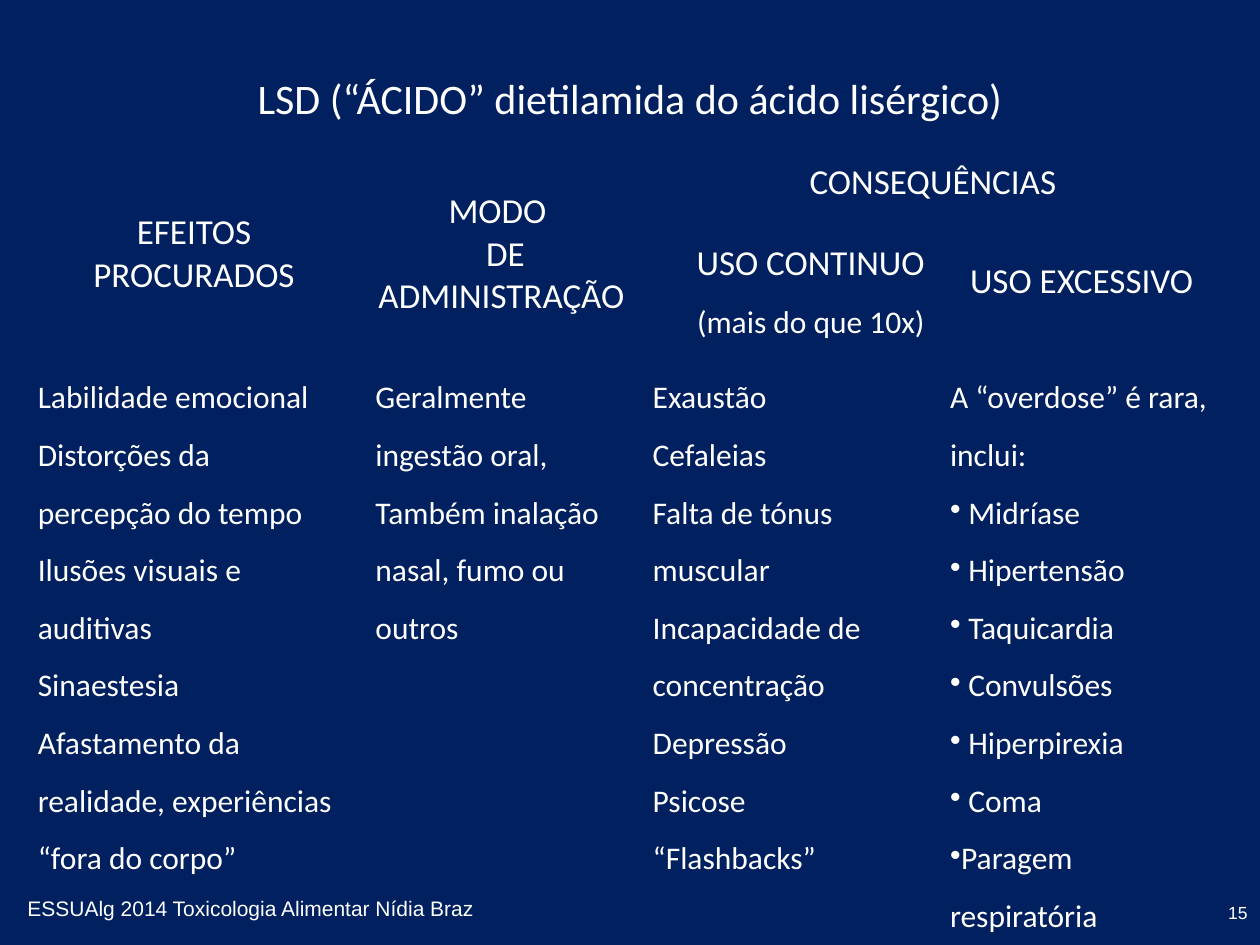
from pptx import Presentation
from pptx.util import Inches, Pt
from pptx.dml.color import RGBColor
from pptx.enum.text import PP_ALIGN as Al, MSO_ANCHOR as Anc
from pptx.oxml.ns import qn
from lxml import etree

NAVY = RGBColor(0x00, 0x20, 0x60)
WHITE = RGBColor(0xFF, 0xFF, 0xFF)
PLAIN = "{2D5ABB26-0587-4C30-8999-92F81FD0307C}"  # table style without borders

prs = Presentation()
prs.slide_width, prs.slide_height = Inches(10), Inches(7.5)
slide = prs.slides.add_slide(prs.slide_layouts[6])
slide.background.fill.solid()
slide.background.fill.fore_color.rgb = NAVY


def write(frame, lines, size, align=Al.LEFT, font="Calibri", space=None):
    frame.word_wrap = True
    for i, line in enumerate(lines):
        para = frame.add_paragraph() if i else frame.paragraphs[0]
        para.alignment, para.line_spacing = align, space
        # A leading bullet mark becomes a real bullet
        para.text = line.removeprefix("•")
        if line.startswith("•"):
            props = para._p.get_or_add_pPr()
            etree.SubElement(props, qn("a:buChar")).set("char", "•")
        for run in para.runs:
            run.font.size, run.font.name = Pt(size), font
            run.font.color.rgb = WHITE


def label(box, text, size, align, font, anchor=Anc.TOP):
    frame = slide.shapes.add_textbox(*map(Inches, box)).text_frame
    write(frame, [text], size, align, font)
    frame.vertical_anchor = anchor


# Title
label((0.5, 0.3, 9, 0.95), "LSD (“ÁCIDO” dietilamida do ácido lisérgico)",
      24, Al.CENTER, "Calibri", Anc.MIDDLE)

# Table grid
cols, rows = (2.68, 2.2, 2.36, 2.29), (0.43, 1.14, 4.51)
frame = slide.shapes.add_table(len(rows), len(cols), Inches(0.2), Inches(1.23),
                               Inches(sum(cols)), Inches(sum(rows)))
table = frame.table
table.first_row = table.horz_banding = False
table._tbl.tblPr.find(qn("a:tableStyleId")).text = PLAIN
for col, width in zip(table.columns, cols):
    col.width = Inches(width)
for row, height in zip(table.rows, rows):
    row.height = Inches(height)
for cell in table.iter_cells():
    cell.fill.solid()
    cell.fill.fore_color.rgb = NAVY
table.cell(0, 0).merge(table.cell(1, 0))
table.cell(0, 1).merge(table.cell(1, 1))
table.cell(0, 2).merge(table.cell(0, 3))

# Headings
heads = [
    (0, 0, ["EFEITOS PROCURADOS"], Al.CENTER, None),
    (0, 1, ["MODO ", " DE ADMINISTRAÇÃO"], Al.CENTER, None),
    (0, 2, ["CONSEQUÊNCIAS"], Al.CENTER, None),
    (1, 2, ["USO CONTINUO "], Al.RIGHT, 1.5),
    (1, 3, ["USO EXCESSIVO"], Al.CENTER, None),
]
for r, c, lines, align, space in heads:
    cell = table.cell(r, c)
    cell.vertical_anchor = Anc.MIDDLE
    write(cell.text_frame, lines, 20, align, space=space)
note = table.cell(1, 2).text_frame.paragraphs[0].add_run()
note.text = "(mais do que 10x)"
note.font.size, note.font.name = Pt(18), "Calibri"
note.font.color.rgb = WHITE

# Body columns
body = [
    ["Labilidade emocional", "Distorções da percepção do tempo",
     "Ilusões visuais e auditivas", "Sinaestesia",
     "Afastamento da realidade, experiências “fora do corpo”"],
    ["Geralmente ingestão oral, ", "Também inalação nasal, fumo ou outros"],
    ["Exaustão", "Cefaleias", "Falta de tónus muscular",
     "Incapacidade de concentração", "Depressão", "Psicose", "“Flashbacks”"],
    ["A “overdose” é rara, inclui:", "• Midríase", "• Hipertensão",
     "• Taquicardia", "• Convulsões", "• Hiperpirexia", "• Coma",
     "•Paragem respiratória"],
]
for c, lines in enumerate(body):
    write(table.cell(2, c).text_frame, lines, 18, space=1.5)
table.cell(2, 1).text_frame.paragraphs[0].alignment = Al.JUSTIFY

# Page number and footer
label((7.67, 7.11, 2.33, 0.39), "15", 10, Al.RIGHT, "Arial")
label((0.12, 7.06, 4.53, 0.32), "ESSUAlg 2014 Toxicologia Alimentar Nídia Braz",
      12, Al.LEFT, "Arial")

prs.save("out.pptx")
